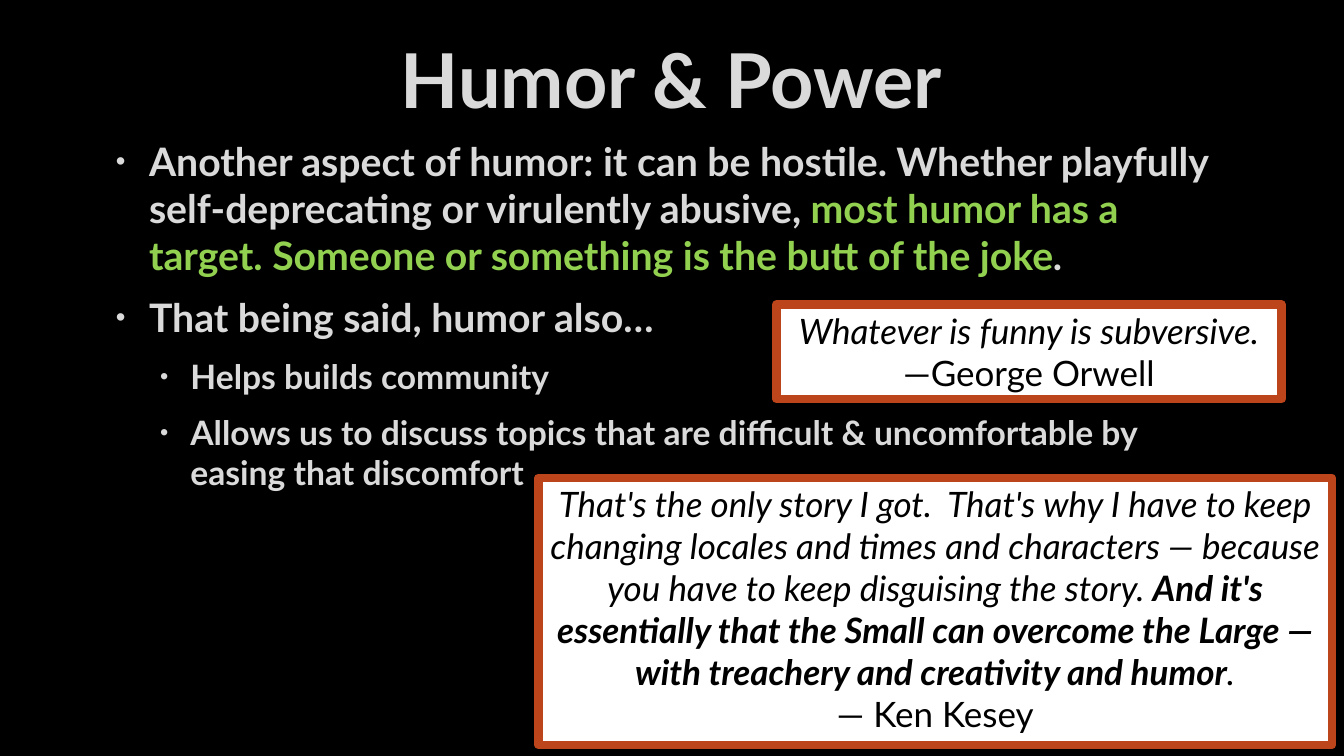
from dataclasses import dataclass

from lxml.etree import SubElement
from pptx import Presentation
from pptx.dml.color import RGBColor as RGB
from pptx.enum.shapes import MSO_SHAPE as Shape
from pptx.enum.text import MSO_ANCHOR as Anchor, MSO_AUTO_SIZE as Fit, PP_ALIGN as Align
from pptx.oxml.ns import qn
from pptx.util import Inches, Pt


@dataclass(frozen=True)
class Theme:
    font: str = "Lato"
    back: str = "000000"
    pale: str = "DADADA"
    green: str = "92D050"
    ink: str = "000000"
    paper: str = "FFFFFF"
    rust: str = "BC451B"
    title: int = 54
    quote: int = 25
    sizes: tuple = (28, 24)  # by bullet level
    insets: tuple = ((0.38, -0.33), (0.79, -0.3))  # margin, indent by level


class Deck:
    def __init__(self, theme):
        self.theme = theme
        self.file = Presentation()
        self.file.slide_width, self.file.slide_height = Inches(13.33), Inches(7.5)
        self.slide = self.file.slides.add_slide(self.file.slide_layouts[6])
        fill = self.slide.background.fill
        fill.solid()
        fill.fore_color.rgb = RGB.from_string(theme.back)

    def style(self, para, size, color, bold=None, align=None):
        font = para.font
        font.name, font.size, font.bold = self.theme.font, Pt(size), bold
        font.color.rgb = RGB.from_string(color)
        para.alignment = align

    def frame(self, *at):
        frame = self.slide.shapes.add_textbox(*map(Inches, at)).text_frame
        frame.word_wrap = True
        return frame

    def lines(self, frame, count):
        return [frame.paragraphs[0]] + [frame.add_paragraph() for _ in range(count - 1)]

    def title(self, text, *at):
        frame = self.frame(*at)
        frame.vertical_anchor = Anchor.MIDDLE
        para = frame.paragraphs[0]
        para.text = text
        self.style(para, self.theme.title, self.theme.pale, True, Align.CENTER)

    def bullet(self, para, level):
        margin, indent = self.theme.insets[level]
        props = para._p.get_or_add_pPr()
        props.set("marL", str(Inches(margin)))
        props.set("indent", str(Inches(indent)))
        tint = SubElement(props, qn("a:buClr"))
        SubElement(tint, qn("a:srgbClr"), val=self.theme.pale)
        SubElement(props, qn("a:buSzPct"), val="70000")
        SubElement(props, qn("a:buFont"), typeface="Arial")
        SubElement(props, qn("a:buChar"), char="•")
        # The default run style must follow the bullet
        props.append(props.find(qn("a:defRPr")))

    def points(self, items, *at):
        """Each item is a level and its (text, colour) runs."""
        frame = self.frame(*at)
        for para, (level, runs) in zip(self.lines(frame, len(items)), items):
            para.level = level
            para.space_before, para.space_after = Pt(5), Pt(6)
            self.style(para, self.theme.sizes[level], self.theme.pale, True)
            self.bullet(para, level)
            for text, color in runs:
                run = para.add_run()
                run.text = text
                run.font.color.rgb = RGB.from_string(color)

    def quote(self, runs, author, *at):
        """Runs are (text, bold) pairs."""
        theme = self.theme
        box = self.slide.shapes.add_shape(Shape.RECTANGLE, *map(Inches, at))
        box.shadow.inherit = False
        box.fill.solid()
        box.fill.fore_color.rgb = RGB.from_string(theme.paper)
        box.line.color.rgb = RGB.from_string(theme.rust)
        box.line.width = Pt(6)
        frame = box.text_frame
        frame.word_wrap, frame.auto_size = True, Fit.SHAPE_TO_FIT_TEXT
        frame.vertical_anchor = Anchor.TOP
        words, name = self.lines(frame, 2)
        for para in (words, name):
            self.style(para, theme.quote, theme.ink, align=Align.CENTER)
        words.font.italic = True
        for text, bold in runs:
            run = words.add_run()
            run.text, run.font.bold = text, bold
        name.text = author


def main():
    theme = Theme()
    deck = Deck(theme)

    # Heading
    deck.title("Humor & Power", 1, 0.25, 11.32, 1.06)

    # Main points
    pale, green = theme.pale, theme.green
    deck.points([
        (0, [("Another aspect of humor: it can be hostile. Whether playfully "
              "self-deprecating or virulently abusive, ", pale),
             ("most humor has a target. Someone or something is the butt "
              "of the joke", green),
             (".", pale)]),
        (0, [("That being said, humor also…", pale)]),
        (1, [("Helps builds community", pale)]),
        (1, [("Allows us to discuss topics that are difficult & uncomfortable "
              "by easing that discomfort", pale)]),
    ], 1, 1.31, 11.32, 5.02)

    # Quotes
    deck.quote([("Whatever is funny is subversive.", False)],
               "—George Orwell", 7.7, 3.02, 5.01, 0.94)
    deck.quote([
        ("That's the only story I got.  That's why I have to keep changing "
         "locales and times and characters — because you have to keep "
         "disguising the story. ", False),
        ("And it's essentially that the Small can overcome the Large — "
         "with treachery and creativity and humor", True),
        (".", False),
    ], "— Ken Kesey", 5.34, 4.74, 7.87, 2.65)

    deck.file.save("out.pptx")


if __name__ == "__main__":
    main()
